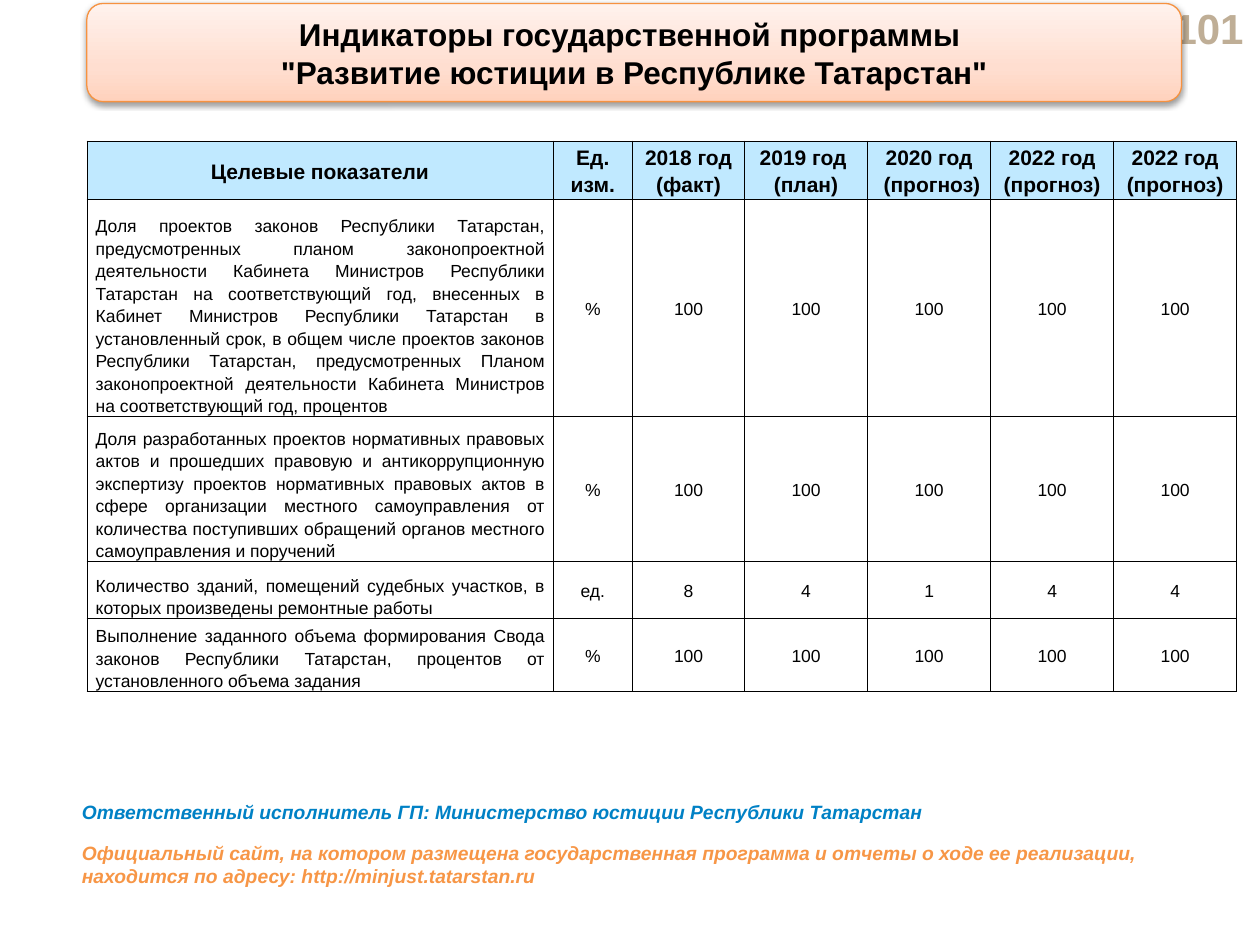
from dataclasses import dataclass
from typing import NamedTuple

from pptx import Presentation
from pptx.dml.color import RGBColor
from pptx.enum.shapes import MSO_SHAPE as Preset
from pptx.enum.text import MSO_ANCHOR as Anchor, PP_ALIGN as Align
from pptx.oxml import parse_xml
from pptx.oxml.ns import nsdecls
from pptx.util import Cm, Pt

FONT = "Arial"
BLACK = "000000"
WHITE = "FFFFFF"
HEADER_FILL = "C0E9FF"
COLUMN_WIDTHS = [9.4, 1.6, 2.26] + [2.48] * 4


class Box(NamedTuple):
    left: float
    top: float
    width: float
    height: float

    def lengths(self) -> list:
        return [Cm(value) for value in self]


@dataclass
class TextStyle:
    size: float
    color: str = BLACK
    bold: bool = False
    italic: bool = False
    align: Align = Align.LEFT
    anchor: Anchor = Anchor.TOP
    spacing: float = 1.0


@dataclass
class Label:
    box: Box
    text: str
    style: TextStyle


@dataclass
class Indicator:
    name: str
    unit: str
    values: list[str]
    height: float


HEADER_STYLE = TextStyle(12, bold=True, align=Align.CENTER, anchor=Anchor.MIDDLE, spacing=1.15)
NAME_STYLE = TextStyle(10, align=Align.JUSTIFY, anchor=Anchor.BOTTOM, spacing=1.15)
VALUE_STYLE = TextStyle(10, align=Align.CENTER, anchor=Anchor.MIDDLE, spacing=1.15)
TITLE_STYLE = TextStyle(18, bold=True, align=Align.CENTER, anchor=Anchor.MIDDLE)

PAGE_NUMBER = Label(
    Box(23.14, 0.13, 2.18, 0.86), "101",
    TextStyle(24, "BFAE96", bold=True, align=Align.RIGHT, anchor=Anchor.MIDDLE),
)
TITLE = Label(
    Box(1.75, 0.07, 22.07, 1.98),
    'Индикаторы государственной программы \n"Развитие юстиции в Республике Татарстан"',
    TITLE_STYLE,
)
FOOTERS = [
    Label(
        Box(1.4, 16, 23.24, 1.19),
        "Ответственный исполнитель ГП: Министерство юстиции Республики Татарстан",
        TextStyle(11, "0081C5", bold=True, italic=True),
    ),
    Label(
        Box(1.4, 16.84, 21.82, 1.09),
        "Официальный сайт, на котором размещена государственная программа и отчеты "
        "о ходе ее реализации, находится по адресу: http://minjust.tatarstan.ru",
        TextStyle(11, "F79646", bold=True, italic=True),
    ),
]

TABLE_BOX = Box(1.75, 2.84, sum(COLUMN_WIDTHS), 11.08)
HEADER_HEIGHT = 1.17
HEADERS = [
    "Целевые показатели", "Ед.\nизм.", "2018 год\n(факт)", "2019 год \n(план)",
    "2020 год\n (прогноз)", "2022 год\n(прогноз)", "2022 год\n(прогноз)",
]
INDICATORS = [
    Indicator(
        "Доля проектов законов Республики Татарстан, предусмотренных планом "
        "законопроектной деятельности Кабинета Министров Республики Татарстан на "
        "соответствующий год, внесенных в Кабинет Министров Республики Татарстан в "
        "установленный срок, в общем числе проектов законов Республики Татарстан, "
        "предусмотренных Планом законопроектной деятельности Кабинета Министров на "
        "соответствующий год, процентов",
        "%", ["100"] * 5, 4.37,
    ),
    Indicator(
        "Доля разработанных проектов нормативных правовых актов и прошедших правовую и "
        "антикоррупционную экспертизу проектов нормативных правовых актов в сфере "
        "организации местного самоуправления от количества поступивших обращений "
        "органов местного самоуправления и поручений",
        "%", ["100"] * 5, 2.92,
    ),
    Indicator(
        "Количество зданий, помещений судебных участков, в которых произведены "
        "ремонтные работы",
        "ед.", ["8", "4", "1", "4", "4"], 1.15,
    ),
    Indicator(
        "Выполнение заданного объема формирования Свода законов Республики Татарстан, "
        "процентов от установленного объема задания",
        "%", ["100"] * 5, 1.47,
    ),
]


def color(value: str) -> RGBColor:
    return RGBColor.from_string(value)


def write_text(frame, text: str, style: TextStyle) -> None:
    frame.word_wrap = True
    paragraph = frame.paragraphs[0]
    paragraph.alignment = style.align
    paragraph.line_spacing = style.spacing
    for index, line in enumerate(text.split("\n")):
        if index:
            paragraph.add_line_break()
        run = paragraph.add_run()
        run.text = line
        run.font.name = FONT
        run.font.size = Pt(style.size)
        run.font.bold = style.bold
        run.font.italic = style.italic
        run.font.color.rgb = color(style.color)


def draw_label(slide, label: Label) -> None:
    frame = slide.shapes.add_textbox(*label.box.lengths()).text_frame
    write_text(frame, label.text, label.style)
    frame.vertical_anchor = label.style.anchor


def draw_title(slide, label: Label) -> None:
    shape = slide.shapes.add_shape(Preset.ROUNDED_RECTANGLE, *label.box.lengths())
    properties = shape.element.spPr
    stops = "".join(
        f'<a:gs pos="{position * 1000}"><a:srgbClr val="{value}"/></a:gs>'
        for position, value in [(0, "FFD2BD"), (35, "FFDED0"), (100, "FFF2ED")]
    )
    properties.append(parse_xml(
        f'<a:gradFill {nsdecls("a")} rotWithShape="1"><a:gsLst>{stops}</a:gsLst>'
        '<a:lin ang="16200000" scaled="1"/></a:gradFill>'
    ))
    shape.line.color.rgb = color("F69240")
    shape.line.width = Pt(0.75)
    properties.append(parse_xml(
        f'<a:effectLst {nsdecls("a")}><a:outerShdw blurRad="40000" dist="20000" '
        f'dir="5400000" rotWithShape="0"><a:srgbClr val="{BLACK}">'
        '<a:alpha val="38000"/></a:srgbClr></a:outerShdw></a:effectLst>'
    ))
    write_text(shape.text_frame, label.text, label.style)
    shape.text_frame.vertical_anchor = label.style.anchor


def fill_cell(cell, text: str, style: TextStyle, fill: str) -> None:
    cell.margin_left = cell.margin_right = Cm(0.18)
    cell.margin_top = cell.margin_bottom = Cm(0)
    cell.vertical_anchor = style.anchor
    write_text(cell.text_frame, text, style)
    properties = cell._tc.get_or_add_tcPr()
    for side in ("lnL", "lnR", "lnT", "lnB"):
        properties.append(parse_xml(
            f'<a:{side} {nsdecls("a")} w="{Pt(0.25)}"><a:solidFill>'
            f'<a:srgbClr val="{BLACK}"/></a:solidFill></a:{side}>'
        ))
    cell.fill.solid()
    cell.fill.fore_color.rgb = color(fill)


def draw_table(slide, indicators: list[Indicator]) -> None:
    table = slide.shapes.add_table(
        len(indicators) + 1, len(HEADERS), *TABLE_BOX.lengths()
    ).table
    for column, width in zip(table.columns, COLUMN_WIDTHS):
        column.width = Cm(width)
    table.rows[0].height = Cm(HEADER_HEIGHT)
    for cell, text in zip(table.rows[0].cells, HEADERS):
        fill_cell(cell, text, HEADER_STYLE, HEADER_FILL)
    for row_index, indicator in enumerate(indicators, start=1):
        row = table.rows[row_index]
        row.height = Cm(indicator.height)
        texts = [indicator.name, indicator.unit, *indicator.values]
        for column_index, text in enumerate(texts):
            style = VALUE_STYLE if column_index else NAME_STYLE
            fill_cell(row.cells[column_index], text, style, WHITE)


def main() -> None:
    presentation = Presentation()
    presentation.slide_width = Cm(25.4)
    presentation.slide_height = Cm(19.05)
    slide = presentation.slides.add_slide(presentation.slide_layouts[6])
    draw_label(slide, PAGE_NUMBER)
    draw_table(slide, INDICATORS)
    draw_title(slide, TITLE)
    for footer in FOOTERS:
        draw_label(slide, footer)
    presentation.save("out.pptx")


if __name__ == "__main__":
    main()
